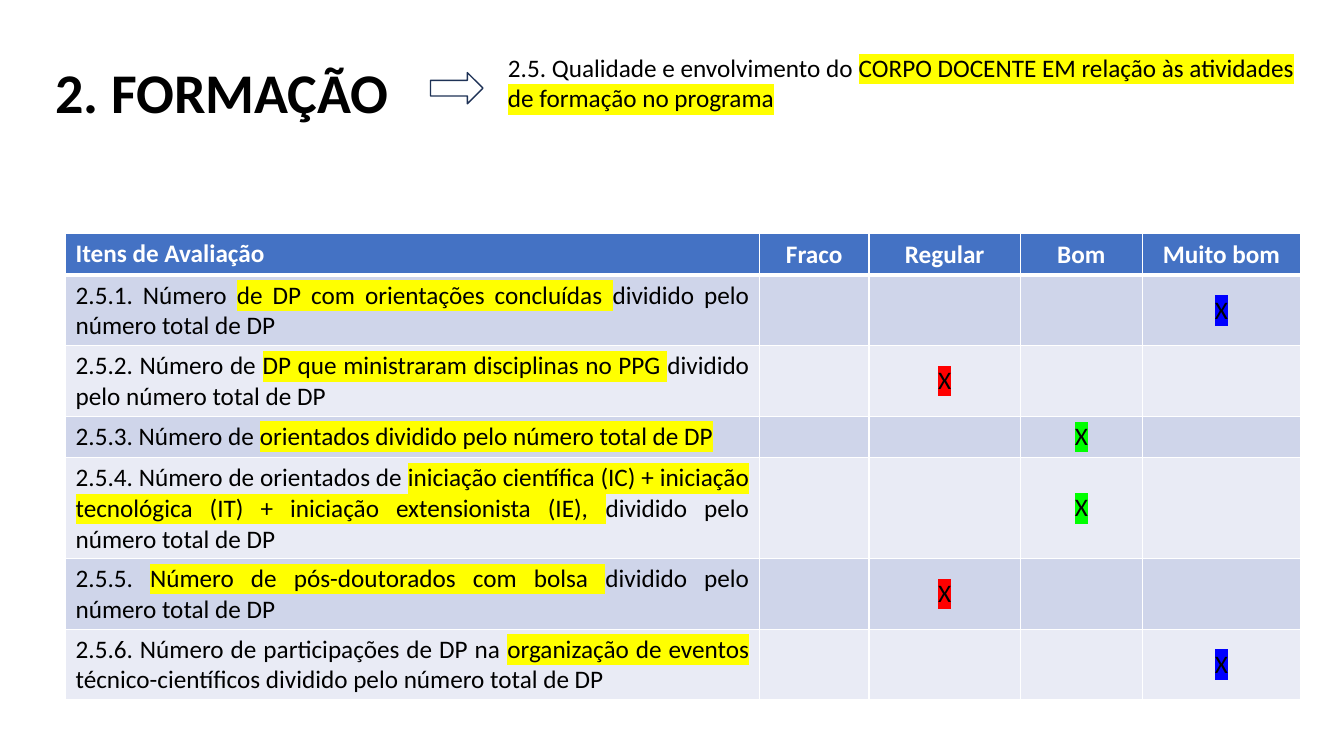
from dataclasses import dataclass

from lxml import etree
from pptx import Presentation
from pptx.dml.color import RGBColor
from pptx.enum.shapes import MSO_SHAPE
from pptx.enum.text import MSO_ANCHOR as ANCHOR, PP_ALIGN as ALIGN
from pptx.oxml.ns import qn
from pptx.util import Pt

PX = 9144  # 100 px to the inch


@dataclass(frozen=True)
class Theme:
    font: str = "Calibri"
    title: int = 40
    body: int = 18
    black: str = "000000"
    white: str = "FFFFFF"
    header: str = "4472C4"
    bands: tuple = ("CFD5EA", "E9EBF5")
    arrow: str = "1E3256"
    yellow: str = "FFFF00"
    red: str = "FF0000"
    green: str = "00FF00"
    blue: str = "0000FF"


T = Theme()


def add_run(p, text, color=T.black, size=T.body, bold=False, highlight=None):
    r = p.add_run()
    r.text = text
    r.font.size = Pt(size)
    r.font.bold = bold
    r.font.color.rgb = RGBColor.from_string(color)
    if highlight:
        mark = etree.SubElement(r.font._element, qn("a:highlight"))
        etree.SubElement(mark, qn("a:srgbClr"), val=highlight)
    r.font.name = T.font


def style_cell(cell, fill, top, bottom):
    """Give the cell white borders, with top and bottom widths in points, and a fill."""
    tcPr = cell._tc.get_or_add_tcPr()
    for side, width in (("L", 1), ("R", 1), ("T", top), ("B", bottom)):
        ln = etree.SubElement(tcPr, qn(f"a:ln{side}"), w=str(Pt(width)))
        solid = etree.SubElement(ln, qn("a:solidFill"))
        etree.SubElement(solid, qn("a:srgbClr"), val=T.white)
    cell.fill.solid()
    cell.fill.fore_color.rgb = RGBColor.from_string(fill)


prs = Presentation()
prs.slide_width, prs.slide_height = 1333 * PX, 750 * PX
s = prs.slides.add_slide(prs.slide_layouts[6])

# Title
tf = s.shapes.add_textbox(45 * PX, 22 * PX, 1150 * PX, 145 * PX).text_frame
tf.word_wrap = True
tf.vertical_anchor = ANCHOR.MIDDLE
p = tf.paragraphs[0]
p.line_spacing = 0.9
add_run(p, "2. FORMAÇÃO", size=T.title, bold=True)

# Evaluation table
COLUMNS = (("Itens de Avaliação", 688), ("Fraco", 109), ("Regular", 150),
           ("Bom", 121), ("Muito bom", 157))
ROW_HEIGHT = 41
REGULAR, GOOD, VERY_GOOD = 2, 3, 4
MARK_COLORS = {REGULAR: T.red, GOOD: T.green, VERY_GOOD: T.blue}
# Plain start, highlighted middle, plain end, column of the mark
ITEMS = (
    ("2.5.1. Número ", "de DP com orientações concluídas ",
     "dividido pelo número total de DP", VERY_GOOD),
    ("2.5.2. Número de ", "DP que ministraram disciplinas no PPG ",
     "dividido pelo número total de DP", REGULAR),
    ("2.5.3. Número de ", "orientados dividido pelo número total de DP", "", GOOD),
    ("2.5.4. Número de orientados de ",
     "iniciação científica (IC) + iniciação tecnológica (IT) + iniciação extensionista (IE), ",
     "dividido pelo número total de DP", GOOD),
    ("2.5.5. ", "Número de pós-doutorados com bolsa ",
     "dividido pelo número total de DP", REGULAR),
    ("2.5.6. Número de participações de DP na ", "organização de eventos ",
     "técnico-científicos dividido pelo número total de DP", VERY_GOOD),
)

row_count = len(ITEMS) + 1
table = s.shapes.add_table(row_count, len(COLUMNS), 65 * PX, 232 * PX,
                           sum(w for _, w in COLUMNS) * PX,
                           row_count * ROW_HEIGHT * PX).table
for row in table.rows:
    row.height = ROW_HEIGHT * PX

for col, (heading, width) in enumerate(COLUMNS):
    table.columns[col].width = width * PX
    cell = table.cell(0, col)
    style_cell(cell, T.header, top=1, bottom=3)
    p = cell.text_frame.paragraphs[0]
    if col:
        cell.vertical_anchor = ANCHOR.MIDDLE
        p.alignment = ALIGN.CENTER
    add_run(p, heading, T.white, bold=True)

for row, (start, marked, end, rating) in enumerate(ITEMS, 1):
    for col in range(len(COLUMNS)):
        style_cell(table.cell(row, col), T.bands[(row - 1) % 2],
                   top=3 if row == 1 else 1, bottom=1)
    p = table.cell(row, 0).text_frame.paragraphs[0]
    p.alignment = ALIGN.JUSTIFY
    add_run(p, start)
    add_run(p, marked, highlight=T.yellow)
    if end:
        add_run(p, end)

    cell = table.cell(row, rating)
    cell.vertical_anchor = ANCHOR.MIDDLE
    p = cell.text_frame.paragraphs[0]
    p.alignment = ALIGN.CENTER
    add_run(p, "X", highlight=MARK_COLORS[rating])

# Criterion and the arrow leading to it
tf = s.shapes.add_textbox(494 * PX, 47 * PX, 817 * PX, 71 * PX).text_frame
tf.word_wrap = True
p = tf.paragraphs[0]
add_run(p, "2.5. Qualidade e envolvimento do ")
add_run(p, "CORPO DOCENTE EM relação às atividades de formação no programa",
        highlight=T.yellow)

arrow = s.shapes.add_shape(MSO_SHAPE.RIGHT_ARROW, 427 * PX, 72 * PX, 52 * PX, 31 * PX)
arrow.shadow.inherit = False
arrow.fill.background()
arrow.line.color.rgb = RGBColor.from_string(T.arrow)
arrow.line.width = Pt(1)

prs.save("out.pptx")
